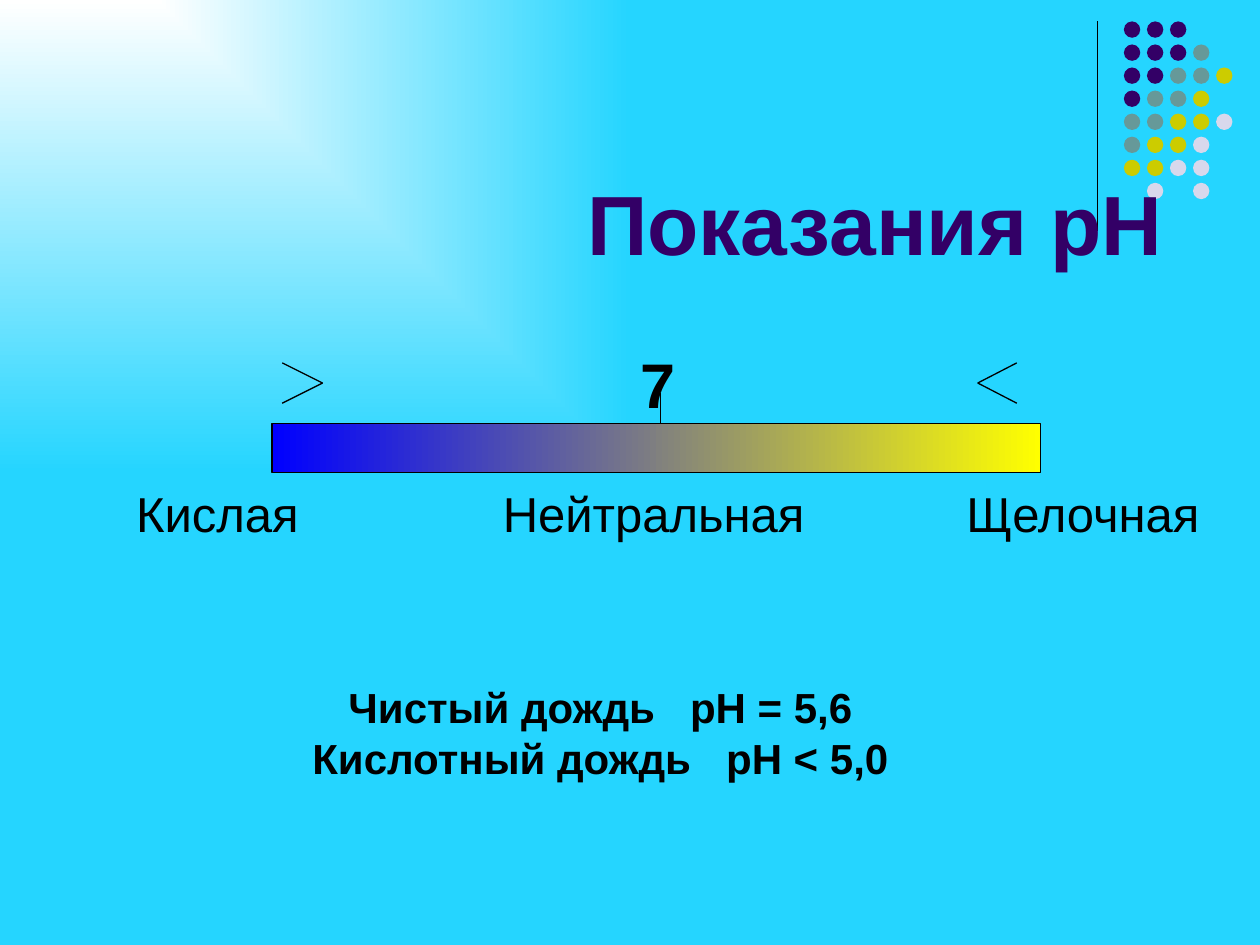
from dataclasses import dataclass

from pptx import Presentation
from pptx import util as u
from pptx.dml.color import RGBColor
from pptx.enum import shapes, text
from pptx.oxml import ns
from lxml import etree


@dataclass(frozen=True)
class Theme:
    font: str = "Arial"
    ink: str = "000000"
    title: str = "330066"
    sky: tuple = ("FFFFFF", "25D5FF")
    scale: tuple = ("0000FF", "FFFF00")
    title_size: int = 48
    mark_size: int = 36
    label_size: int = 28
    rain_size: int = 24
    line: float = 0.75


THEME = Theme()
DOT_COLOURS = {"P": "330066", "T": "669999", "Y": "CCCC00", "L": "D8D8EC"}
DOT_ROWS = ["PPP", "PPPT", "PPTTY", "PTTY", "TTYYL", "TYYL", "YYLL", " L L"]


def rgb(value):
    return RGBColor.from_string(value)


def add_run(paragraph, words, size, colour=THEME.ink, bold=False, spacing=None):
    run = paragraph.add_run()
    run.text = words
    font = run.font
    font.name, font.size, font.bold = THEME.font, u.Pt(size), bold
    font.color.rgb = rgb(colour)
    if spacing is not None:
        font._element.set("spc", str(round(spacing * 100)))


def text_frame(slide, box, wrap=False, margin_left=0.1, margin_right=0.1):
    frame = slide.shapes.add_textbox(*map(u.Inches, box)).text_frame
    frame.word_wrap = wrap
    frame.margin_left, frame.margin_right = u.Inches(margin_left), u.Inches(margin_right)
    frame.margin_top = u.Inches(0.09)
    return frame


def add_line(slide, x1, y1, x2, y2):
    line = slide.shapes.add_connector(
        shapes.MSO_CONNECTOR.STRAIGHT, *map(u.Inches, (x1, y1, x2, y2)))
    line.line.color.rgb = rgb(THEME.ink)
    line.line.width = u.Pt(THEME.line)
    etree.SubElement(line._element.spPr, ns.qn("a:effectLst"))


def two_colour_gradient(fill, colours):
    fill.gradient()
    for stop, colour in zip(fill.gradient_stops, colours):
        stop.color.rgb = rgb(colour)


def paint_background(slide):
    two_colour_gradient(slide.background.fill, THEME.sky)
    # Spread the gradient from the top left corner
    linear = next(slide._element.iter(ns.qn("a:lin")))
    corner = etree.Element(ns.qn("a:path"), {"path": "rect"})
    etree.SubElement(corner, ns.qn("a:fillToRect"), {"r": "100000", "b": "100000"})
    linear.getparent().replace(linear, corner)


def add_dots(slide, left, top, pitch=0.183, size=0.13):
    group = slide.shapes.add_group_shape()
    for row, codes in enumerate(DOT_ROWS):
        for column, code in enumerate(codes):
            if code == " ":
                continue
            dot = group.shapes.add_shape(
                shapes.MSO_SHAPE.OVAL, u.Inches(left + column * pitch),
                u.Inches(top + row * pitch), u.Inches(size), u.Inches(size))
            dot.shadow.inherit = False
            dot.fill.solid()
            dot.fill.fore_color.rgb = rgb(DOT_COLOURS[code])
            dot.line.fill.background()


def add_title(slide, box, words):
    title = slide.shapes.title
    title.left, title.top, title.width, title.height = map(u.Inches, box)
    frame = title.text_frame
    frame.vertical_anchor = text.MSO_ANCHOR.BOTTOM
    paragraph = frame.paragraphs[0]
    paragraph.alignment = text.PP_ALIGN.RIGHT
    add_run(paragraph, words, THEME.title_size, THEME.title, bold=True)
    slide.shapes._spTree.append(title._element)  # in front of the dots


def add_labels(slide, box, words, tabs):
    paragraph = text_frame(slide, box, wrap=True, margin_left=0.29,
                           margin_right=0).paragraphs[0]
    add_run(paragraph, "\t".join(words), THEME.label_size)
    stops = etree.SubElement(paragraph._p.get_or_add_pPr(), ns.qn("a:tabLst"))
    for tab in tabs:
        etree.SubElement(stops, ns.qn("a:tab"), {"pos": str(u.Inches(tab)), "algn": "l"})


def add_scale(slide, left, top, width, height):
    bar = slide.shapes.add_shape(
        shapes.MSO_SHAPE.RECTANGLE, *map(u.Inches, (left, top, width, height)))
    bar.shadow.inherit = False
    two_colour_gradient(bar.fill, THEME.scale)
    bar.fill.gradient_angle = 0
    bar.line.color.rgb = rgb(THEME.ink)
    bar.line.width = u.Pt(THEME.line)

    # Neutral mark
    mark = text_frame(slide, (5.08, top - 0.71, 0.24, 0.41),
                      margin_left=0, margin_right=0).paragraphs[0]
    mark.alignment = text.PP_ALIGN.CENTER
    add_run(mark, "7", THEME.mark_size, bold=True)
    add_line(slide, 5.24, top - 0.24, 5.24, top)

    # Chevrons pointing to the neutral mark: tip and open end
    middle = top - 0.32
    for tip, end in ((7.76, 8.07), (2.56, 2.24)):
        for rise in (-0.16, 0.16):
            add_line(slide, tip, middle, end, middle + rise)


def add_rain(slide, box, readings):
    frame = text_frame(slide, box)
    for index, (rain, reading) in enumerate(readings):
        paragraph = frame.add_paragraph() if index else frame.paragraphs[0]
        paragraph.alignment = text.PP_ALIGN.CENTER
        # A widened space sets the reading apart
        for words, spacing in ((rain, None), (" ", 13.3), (reading, None)):
            add_run(paragraph, words, THEME.rain_size, bold=True, spacing=spacing)


def main():
    deck = Presentation()
    deck.slide_width, deck.slide_height = u.Inches(10), u.Inches(7.5)
    slide = deck.slides.add_slide(deck.slide_layouts[5])

    paint_background(slide)
    add_line(slide, 8.71, 0.17, 8.71, 1.83)
    add_dots(slide, 8.92, 0.17)
    add_title(slide, (0.83, 0.6, 8.5, 1.61), "Показания рН")
    add_labels(slide, (0.79, 3.75, 9.21, 0.63),
               ("Кислая", "Нейтральная", "Щелочная"), tabs=(2.91, 6.59))
    add_scale(slide, 2.16, 3.36, 6.1, 0.39)
    add_rain(slide, (1.46, 5.32, 6.61, 0.91),
             (("Чистый дождь", "рН = 5,6"), ("Кислотный дождь", "рН < 5,0")))

    deck.save("out.pptx")


if __name__ == "__main__":
    main()
